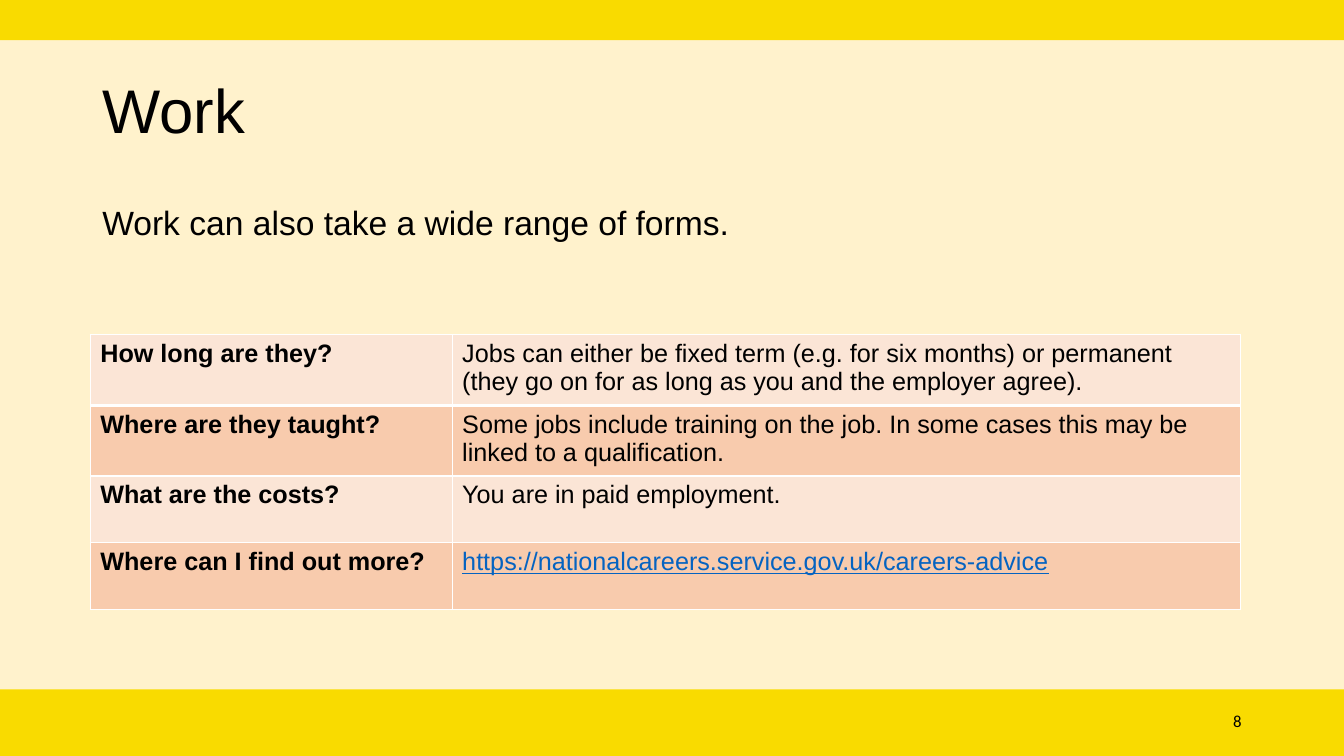
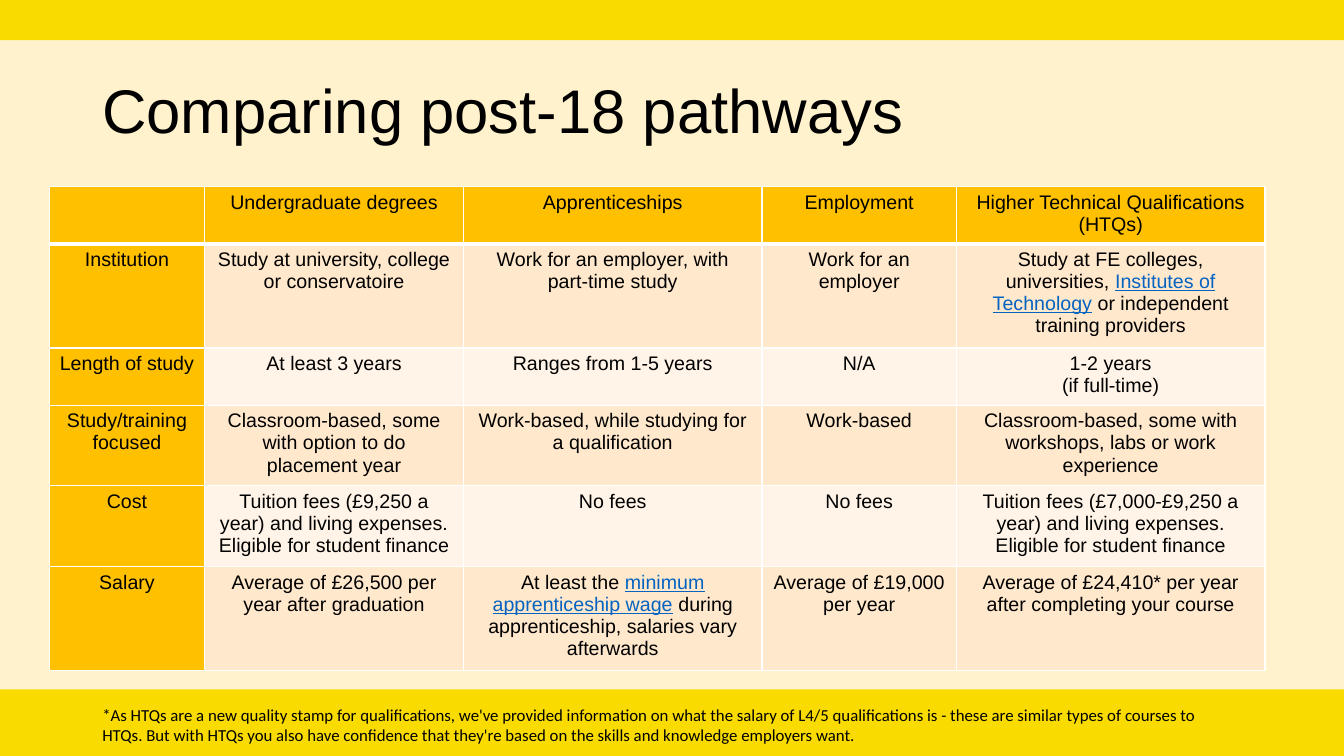
from dataclasses import dataclass

from lxml import etree
from pptx import Presentation
from pptx.dml.color import RGBColor
from pptx.enum.shapes import MSO_SHAPE
from pptx.enum.text import MSO_ANCHOR, PP_ALIGN
from pptx.oxml.ns import qn
from pptx.util import Pt

RECTANGLE = MSO_SHAPE.RECTANGLE
TOP, MIDDLE = MSO_ANCHOR.TOP, MSO_ANCHOR.MIDDLE
LEFT, CENTER, RIGHT = PP_ALIGN.LEFT, PP_ALIGN.CENTER, PP_ALIGN.RIGHT


@dataclass(frozen=True)
class Theme:
    background: str = "FFF2CC"
    band: str = "F9DB00"
    text: str = "000000"
    link: str = "0563C1"
    border: str = "FFFFFF"
    header: str = "FFC000"
    answer_rows: tuple = ("FBE5D6", "F8CBAD")
    comparison_rows: tuple = ("FFE8CC", "FFF4E7")
    font: str = "Arial"
    footer_font: str = "Calibri"
    title_size: int = 44
    body_size: int = 24
    answer_size: int = 18
    comparison_size: int = 14
    footer_size: int = 12


@dataclass(frozen=True)
class Link:
    """A run shown in the link style."""
    text: str


THEME = Theme()
SLIDE_WIDTH, SLIDE_HEIGHT = 960, 540
TOP_BAND = (0, 0, SLIDE_WIDTH, 28.8)
BOTTOM_BAND = (0, 492.5, SLIDE_WIDTH, 47.5)
TITLE_BOX = (66, 28.8, 723, 104.4)
BODY_BOX = (66, 144, 828, 60)
PAGE_NUMBER_BOX = (678, 500.4, 216, 28.8)
FOOTNOTE_BOX = (66, 499.7, 816.5, 36)

ANSWERS = [
    ("How long are they?",
     "Jobs can either be fixed term (e.g. for six months) or permanent "
     "(they go on for as long as you and the employer agree)."),
    ("Where are they taught?",
     "Some jobs include training on the job. In some cases this may be "
     "linked to a qualification."),
    ("What are the costs?", "You are in paid employment."),
    ("Where can I find out more?",
     (Link("https://nationalcareers.service.gov.uk/careers-advice"),)),
]

COMPARISON = [
    ("", "Undergraduate degrees", "Apprenticeships", "Employment",
     "Higher Technical Qualifications (HTQs)"),
    ("Institution",
     "Study at university, college or conservatoire",
     "Work for an employer, with part-time study",
     "Work for an employer",
     ("Study at FE colleges, universities, ", Link("Institutes of Technology"),
      " or independent training providers")),
    ("Length of study", "At least 3 years", "Ranges from 1-5 years", "N/A",
     "1-2 years\n(if full-time)"),
    ("Study/training focused",
     "Classroom-based, some with option to do placement year",
     "Work-based, while studying for a qualification",
     "Work-based",
     "Classroom-based, some with workshops, labs or work experience"),
    ("Cost",
     "Tuition fees (£9,250 a year) and living expenses. "
     "Eligible for student finance",
     "No fees", "No fees",
     "Tuition fees (£7,000-£9,250 a year) and living expenses. "
     "Eligible for student finance"),
    ("Salary",
     "Average of £26,500 per year after graduation",
     ("At least the ", Link("minimum apprenticeship wage"),
      " during apprenticeship, salaries vary afterwards"),
     "Average of £19,000 per year",
     "Average of £24,410* per year after completing your course"),
]

FOOTNOTE = (
    "*As HTQs are a new quality stamp for qualifications, we've provided "
    "information on what the salary of L4/5 qualifications is - these are "
    "similar types of courses to HTQs. But with HTQs you also have confidence "
    "that they're based on the skills and knowledge employers want."
)


def points(values):
    return [Pt(value) for value in values]


def paint(fill, color):
    fill.solid()
    fill.fore_color.rgb = RGBColor.from_string(color)


def write_text(frame, content, size, font=THEME.font, bold=False,
               align=LEFT, line_spacing=None):
    """Write a string, one paragraph per line, or a tuple of strings and links."""
    lines = [(line,) for line in content.split("\n")] if isinstance(content, str) else [content]
    for index, line in enumerate(lines):
        paragraph = frame.add_paragraph() if index else frame.paragraphs[0]
        paragraph.alignment = align
        if line_spacing:
            paragraph.line_spacing = line_spacing
        paragraph.font.size = Pt(size)
        for part in filter(None, line):
            is_link = isinstance(part, Link)
            run = paragraph.add_run()
            run.text = part.text if is_link else part
            run.font.name = font
            run.font.size = Pt(size)
            run.font.bold = bold
            run.font.underline = is_link
            run.font.color.rgb = RGBColor.from_string(THEME.link if is_link else THEME.text)


def add_text(slide, box, content, anchor=TOP, **text_format):
    frame = slide.shapes.add_textbox(*points(box)).text_frame
    frame.word_wrap = True
    frame.vertical_anchor = anchor
    write_text(frame, content, **text_format)


def add_band(slide, box):
    band = slide.shapes.add_shape(RECTANGLE, *points(box))
    band.shadow.inherit = False
    paint(band.fill, THEME.band)
    band.line.fill.background()


def set_borders(cell, bottom_width):
    properties = cell._tc.get_or_add_tcPr()
    widths = {"a:lnL": 1, "a:lnR": 1, "a:lnT": 1, "a:lnB": bottom_width}
    for position, (tag, width) in enumerate(widths.items()):
        line = etree.Element(qn(tag), w=str(Pt(width)))
        fill = etree.SubElement(line, qn("a:solidFill"))
        etree.SubElement(fill, qn("a:srgbClr"), val=THEME.border)
        properties.insert(position, line)


def add_table(slide, left, top, column_widths, row_heights, rows, cell_color,
              bold_first_column=False, **text_format):
    """Add a bordered table; cell_color gives the fill for a row and column."""
    box = points((left, top, sum(column_widths), sum(row_heights)))
    table = slide.shapes.add_table(len(rows), len(column_widths), *box).table
    table.first_row = table.horz_banding = False
    for column, width in zip(table.columns, column_widths):
        column.width = Pt(width)
    for row, height in zip(table.rows, row_heights):
        row.height = Pt(height)
    for row_index, row in enumerate(rows):
        for column_index, content in enumerate(row):
            cell = table.cell(row_index, column_index)
            paint(cell.fill, cell_color(row_index, column_index))
            set_borders(cell, bottom_width=1 if row_index else 3)
            write_text(cell.text_frame, content,
                       bold=bold_first_column and column_index == 0, **text_format)


def answer_color(row, column):
    return THEME.answer_rows[row % 2]


def comparison_color(row, column):
    if row == 0 or column == 0:
        return THEME.header
    return THEME.comparison_rows[(row - 1) % 2]


def add_titled_slide(presentation, title):
    slide = presentation.slides.add_slide(presentation.slide_layouts[6])
    paint(slide.background.fill, THEME.background)
    for box in (TOP_BAND, BOTTOM_BAND):
        add_band(slide, box)
    add_text(slide, TITLE_BOX, title, anchor=MIDDLE, size=THEME.title_size, line_spacing=0.9)
    return slide


def add_work_slide(presentation):
    slide = add_titled_slide(presentation, "Work")
    add_text(slide, BODY_BOX, "Work can also take a wide range of forms.",
             size=THEME.body_size, line_spacing=0.9)
    add_table(slide, 64.5, 239.2, (258.5, 563), [47.6] * len(ANSWERS), ANSWERS,
              answer_color, bold_first_column=True, size=THEME.answer_size)
    add_text(slide, PAGE_NUMBER_BOX, "8", anchor=MIDDLE, align=RIGHT,
             size=THEME.footer_size, font=THEME.footer_font)


def add_comparison_slide(presentation):
    slide = add_titled_slide(presentation, "Comparing post-18 pathways")
    add_table(slide, 35.3, 133.2, (110.9, 185, 213.1, 139, 220.3),
              (39.4, 70.2, 39.4, 55.2, 55.2, 70.2), COMPARISON,
              comparison_color, size=THEME.comparison_size, align=CENTER)
    add_text(slide, FOOTNOTE_BOX, FOOTNOTE,
             size=THEME.footer_size, font=THEME.footer_font)


def main():
    presentation = Presentation()
    presentation.slide_width = Pt(SLIDE_WIDTH)
    presentation.slide_height = Pt(SLIDE_HEIGHT)
    add_work_slide(presentation)
    add_comparison_slide(presentation)
    presentation.save("out.pptx")


if __name__ == "__main__":
    main()
